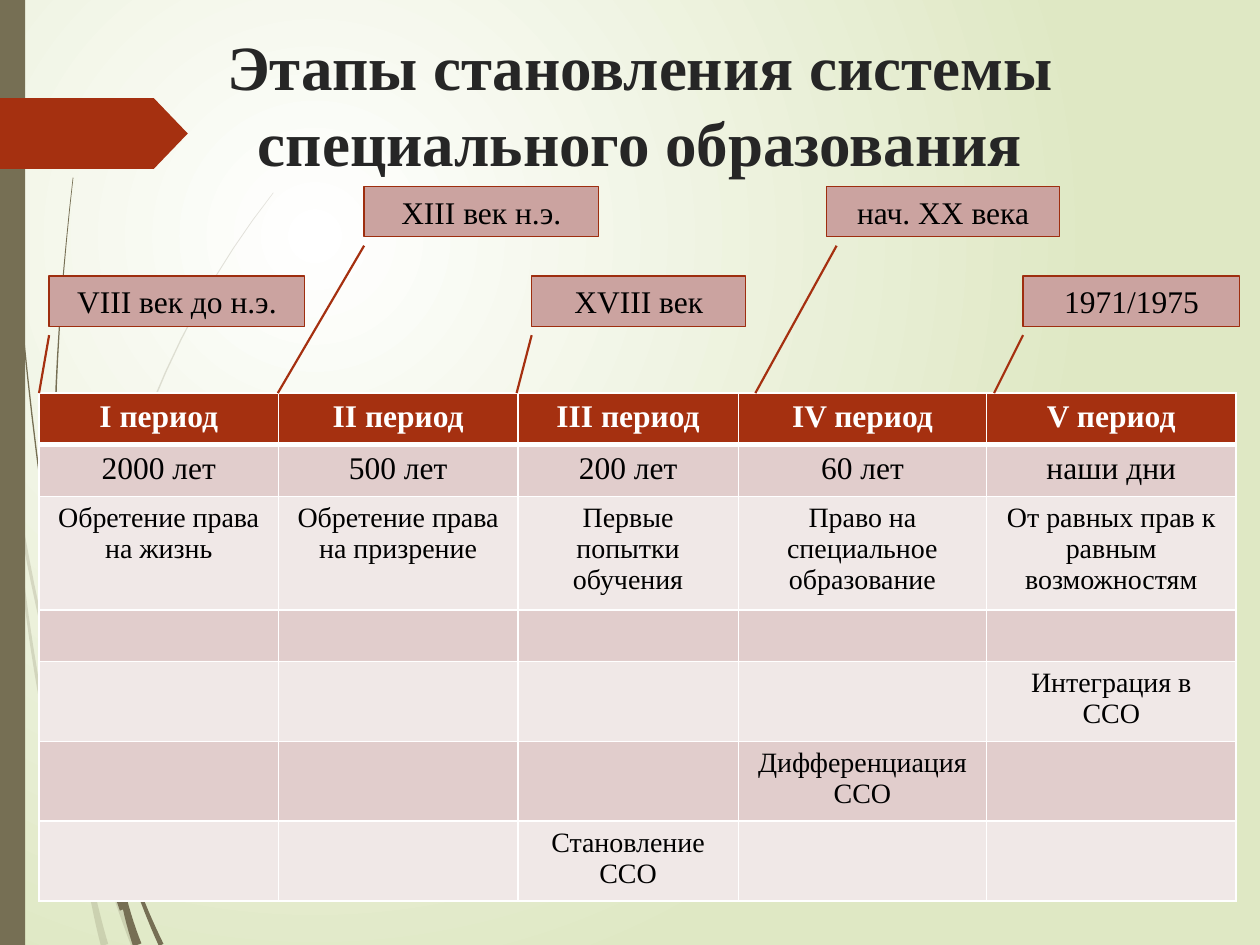
from math import hypot
from typing import NamedTuple

from lxml import etree
from pptx import Presentation
from pptx.dml.color import RGBColor
from pptx.enum.shapes import MSO_CONNECTOR, MSO_SHAPE
from pptx.enum.text import MSO_ANCHOR, PP_ALIGN
from pptx.oxml.ns import qn
from pptx.util import Emu, Inches, Pt

RECTANGLE, ARROW_TAG = MSO_SHAPE.RECTANGLE, MSO_SHAPE.PENTAGON
STRAIGHT = MSO_CONNECTOR.STRAIGHT
CENTER, TOP, MIDDLE = PP_ALIGN.CENTER, MSO_ANCHOR.TOP, MSO_ANCHOR.MIDDLE

WHITE, BLACK = RGBColor(255, 255, 255), RGBColor(0, 0, 0)
PALE_GREEN = RGBColor(0xDF, 0xE8, 0xC4)
OLIVE = RGBColor(0x76, 0x6F, 0x54)
RUST, DARK_RUST = RGBColor(0xA5, 0x30, 0x10), RGBColor(0x9E, 0x2E, 0x0F)
DUSTY_ROSE = RGBColor(0xCB, 0xA3, 0xA0)
BAND_DARK, BAND_LIGHT = RGBColor(0xE1, 0xCD, 0xCC), RGBColor(0xF0, 0xE8, 0xE7)
TITLE_GREY = RGBColor(0x26, 0x26, 0x26)
FONT = "Times New Roman"

# The slide is a grid of 1000 columns by 750 rows
SLIDE_WIDTH, SLIDE_HEIGHT = Inches(10), Inches(7.5)
GRID_COLUMNS, GRID_ROWS = 1000, 750
TABLE_LEFT, TABLE_TOP = 31, 312
COLUMN_WIDTHS = (190, 190, 175, 197, 198)
ROW_HEIGHTS = (41, 41, 84, 41, 59, 59, 59)
LEADER_STEP = 189.5
CURVE_STEPS = 16


class Label(NamedTuple):
    text: str
    left: int
    top: int
    width: int
    leader_shift: int = 0


class Blade(NamedTuple):
    """A quadratic curve that tapers between two widths."""
    start: tuple[int, int]
    bend: tuple[int, int]
    end: tuple[int, int]
    start_width: float
    end_width: float
    opacity: int = 100


LABELS = (
    Label("VIII век до н.э.", 39, 219, 203),
    Label("XIII век н.э.", 289, 148, 186),
    Label("XVIII век", 422, 219, 170),
    Label("нач. XX века", 656, 148, 185, 8),
    Label("1971/1975", 812, 219, 172),
)

PERIODS = (
    ("I период", "II период", "III период", "IV период", "V период"),
    ("2000 лет", "500 лет", "200 лет", "60 лет", "наши дни"),
    ("Обретение права на жизнь", "Обретение права на призрение", "Первые попытки обучения",
     "Право на специальное образование", "От равных прав к равным возможностям"),
    ("",) * 5,
    ("", "", "", "", "Интеграция в ССО"),
    ("", "", "", "Дифференциация ССО", ""),
    ("", "", "Становление ССО", "", ""),
)

BLADES = (
    Blade((0, 290), (15, 447), (59, 595), 3, 2, 20),
    Blade((9, 350), (18, 538), (70, 714), 1, 4, 20),
    Blade((61, 600), (78, 680), (106, 750), 1, 4, 20),
    Blade((60, 590), (82, 325), (217, 153), 2, 0.5, 20),
    Blade((59, 599), (65, 685), (83, 750), 1, 6, 20),
    Blade((2, 0), (8, 240), (46, 479), 1, 1),
    Blade((47, 477), (54, 600), (97, 722), 1, 4),
    Blade((51, 472), (62, 564), (88, 640), 1, 4),
    Blade((91, 645), (104, 699), (128, 750), 1, 4),
    Blade((48, 472), (35, 343), (58, 141), 2, 0.5),
    Blade((90, 640), (107, 458), (216, 344), 3, 0.5),
    Blade((89, 645), (92, 703), (109, 750), 1, 7),
)


def x(columns: float) -> Emu:
    return Emu(round(SLIDE_WIDTH * columns / GRID_COLUMNS))


def y(rows: float) -> Emu:
    return Emu(round(SLIDE_HEIGHT * rows / GRID_ROWS))


def style_text(frame, text: str, size: float, color: RGBColor, bold: bool = False) -> None:
    frame.text = text
    frame.word_wrap = True
    paragraph = frame.paragraphs[0]
    paragraph.alignment = CENTER
    font = paragraph.runs[0].font if text else paragraph.font
    font.name, font.size, font.bold = FONT, Pt(size), bold
    font.color.rgb = color


def paint(shape, fill: RGBColor) -> None:
    shape.shadow.inherit = False
    shape.fill.solid()
    shape.fill.fore_color.rgb = fill
    shape.line.fill.background()


def draw_blade(shapes, blade: Blade) -> None:
    left_edge, right_edge = [], []
    for step in range(CURVE_STEPS + 1):
        t = step / CURVE_STEPS
        px, py = ((1 - t) ** 2 * a + 2 * t * (1 - t) * b + t * t * c
                  for a, b, c in zip(blade.start, blade.bend, blade.end))
        dx, dy = ((1 - t) * (b - a) + t * (c - b)
                  for a, b, c in zip(blade.start, blade.bend, blade.end))
        half = (blade.start_width * (1 - t) + blade.end_width * t) / 2 / hypot(dx, dy)
        left_edge.append((x(px - dy * half), y(py + dx * half)))
        right_edge.append((x(px + dy * half), y(py - dx * half)))
    builder = shapes.build_freeform(*left_edge[0], 1.0)
    builder.add_line_segments(left_edge[1:] + right_edge[::-1], close=True)
    shape = builder.convert_to_shape()
    paint(shape, OLIVE)
    if blade.opacity < 100:
        color = shape._element.spPr.find(qn("a:solidFill")).find(qn("a:srgbClr"))
        etree.SubElement(color, qn("a:alpha")).set("val", str(blade.opacity * 1000))


def draw_label(shapes, label: Label, leader_end: float) -> None:
    box = shapes.add_shape(RECTANGLE, x(label.left), y(label.top), x(label.width), y(40))
    paint(box, DUSTY_ROSE)
    box.line.color.rgb, box.line.width = DARK_RUST, Pt(0.75)
    box.text_frame.vertical_anchor = MIDDLE
    style_text(box.text_frame, label.text, 18, BLACK)
    leader = shapes.add_connector(STRAIGHT, x(label.left + label.leader_shift), y(label.top + 47),
                                  x(leader_end), y(TABLE_TOP))
    leader.line.color.rgb, leader.line.width = RUST, Pt(1.25)
    etree.SubElement(leader._element.spPr, qn("a:effectLst"))


def set_borders(cell, row: int) -> None:
    properties = cell._tc.get_or_add_tcPr()
    widths = {"lnL": 1, "lnR": 1, "lnT": 3 if row == 1 else 1, "lnB": 3 if row == 0 else 1}
    for position, (side, width) in enumerate(widths.items()):
        line = etree.Element(qn("a:" + side), w=str(Pt(width)))
        fill = etree.SubElement(line, qn("a:solidFill"))
        etree.SubElement(fill, qn("a:srgbClr")).set("val", str(WHITE))
        properties.insert(position, line)


def draw_periods(shapes) -> None:
    table = shapes.add_table(len(PERIODS), len(COLUMN_WIDTHS), x(TABLE_LEFT), y(TABLE_TOP),
                             x(sum(COLUMN_WIDTHS)), y(sum(ROW_HEIGHTS))).table
    for column, width in zip(table.columns, COLUMN_WIDTHS):
        column.width = x(width)
    for r, texts in enumerate(PERIODS):
        table.rows[r].height = y(ROW_HEIGHTS[r])
        for c, text in enumerate(texts):
            cell = table.cell(r, c)
            cell.fill.solid()
            cell.fill.fore_color.rgb = RUST if r == 0 else (BAND_LIGHT, BAND_DARK)[r % 2]
            style_text(cell.text_frame, text, 18 if r < 2 else 16, BLACK if r else WHITE, r == 0)
            set_borders(cell, r)


def draw_background(slide) -> None:
    fill = slide.background.fill
    fill.gradient()
    for stop, color, position in zip(fill.gradient_stops, (WHITE, PALE_GREEN), (0, 1)):
        stop.color.rgb, stop.position = color, position
    linear = slide._element.find(".//" + qn("a:lin"))
    circle = etree.Element(qn("a:path"))
    circle.set("path", "circle")
    etree.SubElement(circle, qn("a:fillToRect"), l="50000", t="50000", r="100000", b="100000")
    linear.getparent().replace(linear, circle)


def main() -> None:
    deck = Presentation()
    deck.slide_width, deck.slide_height = SLIDE_WIDTH, SLIDE_HEIGHT
    slide = deck.slides.add_slide(deck.slide_layouts[6])
    shapes = slide.shapes
    draw_background(slide)
    # Grass, side strip and arrow tag
    for blade in BLADES:
        draw_blade(shapes, blade)
    paint(shapes.add_shape(RECTANGLE, 0, 0, x(20), y(GRID_ROWS)), OLIVE)
    tag = shapes.add_shape(ARROW_TAG, 0, y(78), x(149), y(56))
    tag.adjustments[0] = 0.48
    paint(tag, RUST)
    # Title
    title = shapes.add_textbox(x(33), y(17), x(950), y(116))
    title.text_frame.vertical_anchor = TOP
    style_text(title.text_frame, "Этапы становления системы специального образования", 36, TITLE_GREY, True)
    # Periods and their dates
    draw_periods(shapes)
    for number, label in enumerate(LABELS):
        draw_label(shapes, label, TABLE_LEFT + LEADER_STEP * number)
    deck.save("out.pptx")


if __name__ == "__main__":
    main()
